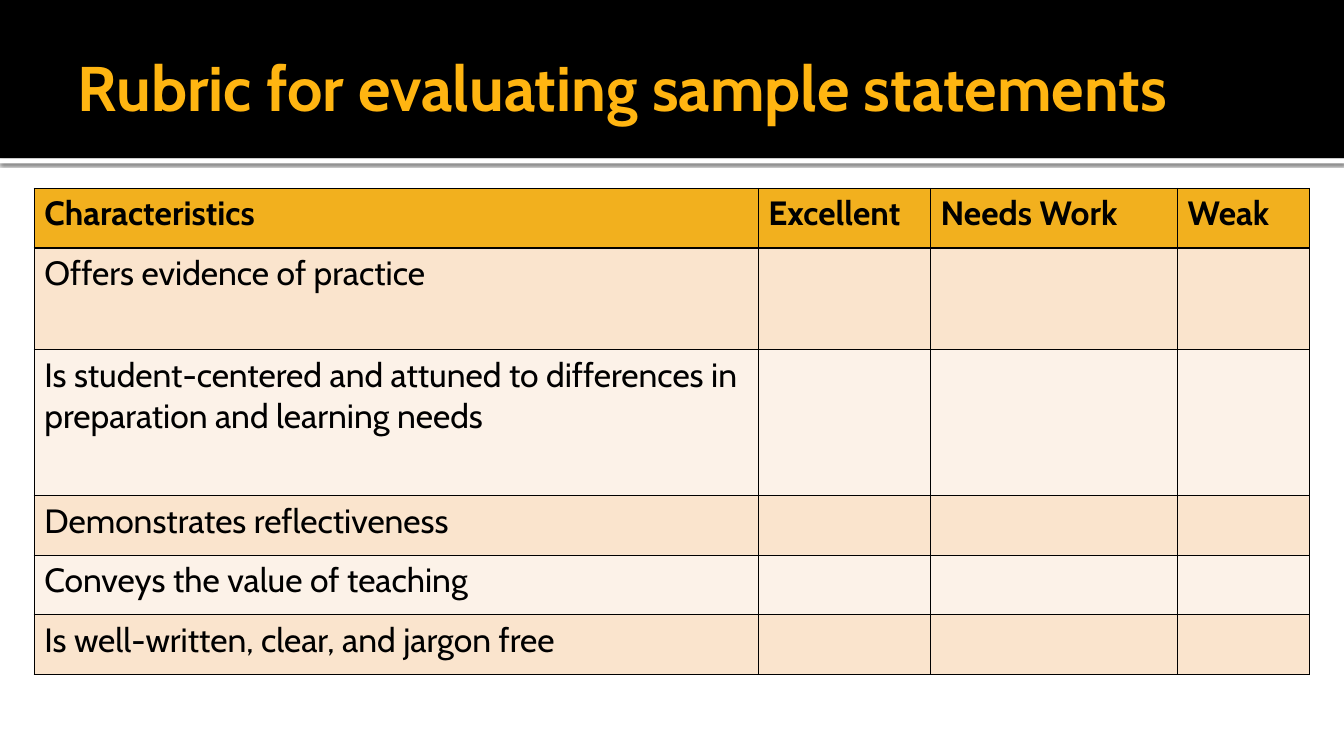
from lxml import etree
from pptx import Presentation
from pptx.dml.color import RGBColor
from pptx.enum import shapes, text
from pptx.oxml import ns
from pptx.util import Inches, Pt

TITLE = "Rubric for evaluating sample statements"
RATINGS = ["Excellent", "Needs Work", "Weak"]
CHARACTERISTICS = [
    "Offers evidence of practice",
    "Is student-centered and attuned to differences in preparation and learning needs",
    "Demonstrates reflectiveness",
    "Conveys the value of teaching",
    "Is well-written, clear, and jargon free",
]
COLUMN_WIDTHS = [7.18, 1.71, 2.45, 1.31]
ROW_HEIGHTS = [0.59, 1.01, 1.45, 0.59, 0.59, 0.59]
FONT = "Cabin"
COLORS = {
    "title": "FFB511", "band": "000000", "rule": "FFFFFF", "text": "000000",
    "border": "000000", "header": "F2B01E", "odd": "FAE4CD", "even": "FCF2E8",
}


def color(name):
    return RGBColor.from_string(COLORS[name])


def add_element(parent, tag, **attributes):
    return etree.SubElement(parent, ns.qn(tag), attributes)


def add_band(slide, top, height, name):
    band = slide.shapes.add_shape(
        shapes.MSO_SHAPE.RECTANGLE, 0, Inches(top), Inches(13.33), Inches(height))
    band.fill.solid()
    band.fill.fore_color.rgb = color(name)
    band.line.fill.background()
    band.shadow.inherit = False
    return band


def add_shadow(shape):
    effects = shape._element.spPr.find(ns.qn("a:effectLst"))
    shadow = add_element(effects, "a:outerShdw", blurRad=str(Pt(2.5)),
                         dist=str(Pt(0.8)), dir="5400000", rotWithShape="0")
    shade = add_element(shadow, "a:srgbClr", val="000000")
    add_element(shade, "a:alpha", val="60000")


def style_font(paragraph, size, name, bold):
    font = paragraph.font
    font.name, font.size, font.bold = FONT, Pt(size), bold
    font.color.rgb = color(name)


def style_cell(cell, fill):
    properties = cell._tc.get_or_add_tcPr()
    for side in ("a:lnL", "a:lnR", "a:lnT", "a:lnB"):
        line = add_element(properties, side, w=str(Pt(1)))
        add_element(add_element(line, "a:solidFill"), "a:srgbClr", val=COLORS["border"])
    cell.fill.solid()
    cell.fill.fore_color.rgb = color(fill)


def build():
    presentation = Presentation()
    presentation.slide_width, presentation.slide_height = Inches(13.33), Inches(7.5)
    slide = presentation.slides.add_slide(presentation.slide_layouts[5])

    # Header band with a shadowed white rule below it
    add_shadow(add_band(slide, 1.57, 0.05, "rule"))
    add_band(slide, 0, 1.57, "band")

    # Title, raised above the band
    title = slide.shapes.title
    slide.shapes._spTree.append(title._element)
    title.left, title.top = Inches(0.67), Inches(0.17)
    title.width, title.height = Inches(12), Inches(1.37)
    frame = title.text_frame
    frame.text = TITLE
    frame.vertical_anchor = text.MSO_ANCHOR.MIDDLE
    frame.margin_left = Inches(0.1)
    frame.margin_right = frame.margin_top = frame.margin_bottom = Inches(0.05)
    frame.paragraphs[0].alignment = text.PP_ALIGN.LEFT
    style_font(frame.paragraphs[0], 45, "title", True)

    # Rubric table
    rows = [["Characteristics", *RATINGS]]
    rows += [[name] + [""] * len(RATINGS) for name in CHARACTERISTICS]
    table = slide.shapes.add_table(
        len(rows), len(COLUMN_WIDTHS), Inches(0.34), Inches(1.87),
        Inches(sum(COLUMN_WIDTHS)), Inches(sum(ROW_HEIGHTS))).table
    for column, width in zip(table.columns, COLUMN_WIDTHS):
        column.width = Inches(width)
    for index, (row, height, labels) in enumerate(zip(table.rows, ROW_HEIGHTS, rows)):
        row.height = Inches(height)
        fill = "header" if index == 0 else "odd" if index % 2 else "even"
        for cell, label in zip(row.cells, labels):
            style_cell(cell, fill)
            cell.text = label
            style_font(cell.text_frame.paragraphs[0], 24, "text", index == 0)

    presentation.save("out.pptx")


if __name__ == "__main__":
    build()
